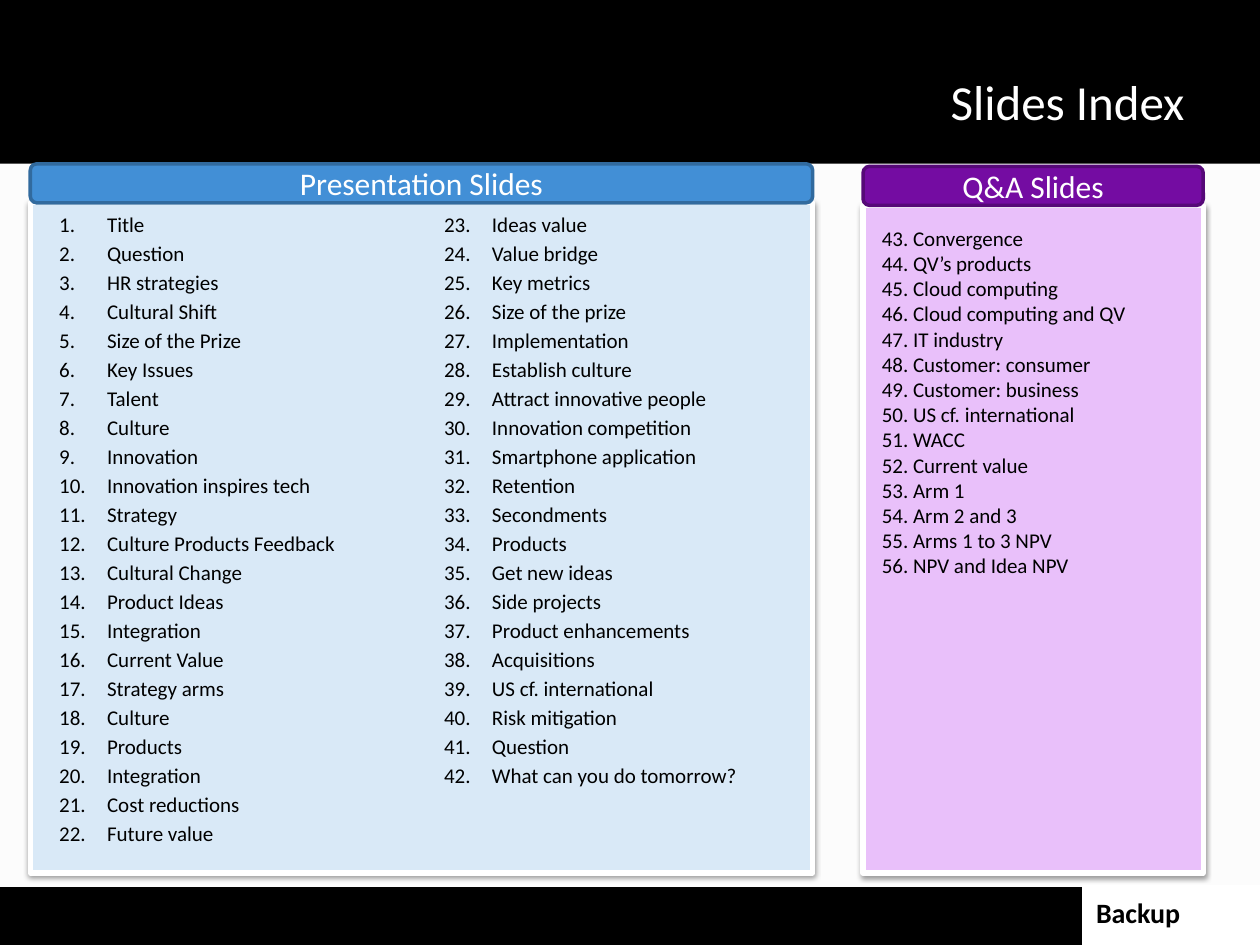
from dataclasses import dataclass

from lxml import etree
from pptx import Presentation
from pptx import util as u
from pptx.dml.color import RGBColor
from pptx.enum import shapes, text
from pptx.oxml import ns

Inches = u.Inches


@dataclass(frozen=True)
class Theme:
    font: str = "Calibri"
    page: str = "FCFCFC"
    black: str = "000000"
    white: str = "FFFFFF"
    blue: tuple = ("428FD6", "316A9E", "D9E9F7")
    purple: tuple = ("740CA2", "560978", "E9C0FA")
    title: float = 28
    heading: float = 18
    label: float = 16
    body: float = 12


THEME = Theme()

PRESENTATION = [
    "Title", "Question", "HR strategies", "Cultural Shift", "Size of the Prize",
    "Key Issues", "Talent", "Culture", "Innovation", "Innovation inspires tech",
    "Strategy", "Culture Products Feedback", "Cultural Change", "Product Ideas",
    "Integration", "Current Value", "Strategy arms", "Culture", "Products",
    "Integration", "Cost reductions", "Future value", "Ideas value",
    "Value bridge", "Key metrics", "Size of the prize", "Implementation",
    "Establish culture", "Attract innovative people", "Innovation competition",
    "Smartphone application", "Retention", "Secondments", "Products",
    "Get new ideas", "Side projects", "Product enhancements", "Acquisitions",
    "US cf. international", "Risk mitigation", "Question",
    "What can you do tomorrow?",
]
QUESTIONS = [
    "Convergence", "QV’s products", "Cloud computing", "Cloud computing and QV",
    "IT industry", "Customer: consumer", "Customer: business",
    "US cf. international", "WACC", "Current value", "Arm 1", "Arm 2 and 3",
    "Arms 1 to 3 NPV", "NPV and Idea NPV",
]


def place(shape, box):
    shape.left, shape.top, shape.width, shape.height = map(Inches, box)


def bring_to_front(shape):
    shape.element.getparent().append(shape.element)


def write(frame, lines, size, color=THEME.black, bold=False, align=None,
          anchor=text.MSO_ANCHOR.TOP, gap=0, numbered=False, wrap=True):
    frame.word_wrap = wrap
    frame.auto_size = text.MSO_AUTO_SIZE.NONE
    frame.vertical_anchor = anchor
    for index, line in enumerate(lines):
        para = frame.paragraphs[0] if index == 0 else frame.add_paragraph()
        if numbered:
            props = para._p.get_or_add_pPr()
            props.set("marL", str(Inches(0.38)))
            props.set("indent", str(-Inches(0.38)))
            etree.SubElement(props, ns.qn("a:buFont"), typeface="+mj-lt")
            etree.SubElement(props, ns.qn("a:buAutoNum"), type="arabicPeriod")
        para.space_before = u.Pt(gap if index else 0)
        para.alignment = align
        span = para.add_run()
        span.text = line
        span.font.name = THEME.font
        span.font.size = u.Pt(size)
        span.font.bold = bold
        span.font.color.rgb = RGBColor.from_string(color)


def add_block(page, box, fill, line=None, weight=0,
              kind=shapes.MSO_SHAPE.RECTANGLE):
    shape = page.shapes.add_shape(kind, *map(Inches, box))
    shape.shadow.inherit = False
    shape.fill.solid()
    shape.fill.fore_color.rgb = RGBColor.from_string(fill)
    if line:
        shape.line.color.rgb = RGBColor.from_string(line)
        shape.line.width = u.Pt(weight)
    else:
        shape.line.fill.background()
    return shape


def add_shadow(shape):
    effects = shape.element.spPr.find(ns.qn("a:effectLst"))
    shadow = etree.SubElement(
        effects, ns.qn("a:outerShdw"), blurRad=str(u.Pt(3.1)),
        dist=str(u.Pt(1.6)), dir="5400000", rotWithShape="0")
    color = etree.SubElement(shadow, ns.qn("a:srgbClr"), val=THEME.black)
    etree.SubElement(color, ns.qn("a:alpha"), val="38000")


def add_header(page, box):
    left, top, width, height = box
    add_block(page, box, THEME.black)
    title = page.shapes.title
    place(title, (left + 0.5, top + 0.3, width - 1, height - 0.3))
    write(title.text_frame, ["Slides Index"], THEME.title, THEME.white,
          align=text.PP_ALIGN.RIGHT, anchor=text.MSO_ANCHOR.MIDDLE)
    bring_to_front(title)


def add_footer(page, box):
    left, top, width, height = box
    add_block(page, box, THEME.black)
    tab = left + 8.6
    add_block(page, (tab, top, width - 8.6, height), THEME.white, THEME.white, 2)
    label = page.shapes.add_textbox(*map(Inches, (tab, top + 0.02, 0.88, 0.37)))
    write(label.text_frame, ["Backup"], THEME.label, bold=True, wrap=False)


def add_panel(page, box, heading, colors):
    left, top, width, height = box
    accent, edge, tint = colors
    bar = 0.31
    add_shadow(add_block(page, (left, top + bar, width, height - bar), tint,
                         THEME.white, 3))
    banner = add_block(page, (left, top, width, bar), accent, edge, 2,
                       shapes.MSO_SHAPE.ROUNDED_RECTANGLE)
    write(banner.text_frame, [heading], THEME.heading, THEME.white,
          align=text.PP_ALIGN.CENTER, anchor=text.MSO_ANCHOR.MIDDLE)


def add_presentation_index(page, box):
    left, top, width, height = box
    add_panel(page, box, "Presentation Slides", THEME.blue)
    body = page.placeholders[1]
    place(body, (left + 0.13, top + 0.33, width + 0.1, 5.18))
    frame = body.text_frame
    write(frame, PRESENTATION, THEME.body, gap=2.15, numbered=True)
    frame.margin_bottom = 0
    frame._txBody.bodyPr.set("numCol", "2")
    bring_to_front(body)


def add_question_index(page, box):
    left, top, width, height = box
    add_panel(page, box, "Q&A Slides", THEME.purple)
    first = len(PRESENTATION) + 1
    entries = [f"{number}. {name}" for number, name in enumerate(QUESTIONS, first)]
    area = (left + 0.05, top + 0.42, width - 0.05, 2.93)
    listing = page.shapes.add_textbox(*map(Inches, area))
    write(listing.text_frame, entries, THEME.body)


def main():
    deck = Presentation()
    deck.slide_width, deck.slide_height = Inches(10), Inches(7.5)
    page = deck.slides.add_slide(deck.slide_layouts[1])
    page.background.fill.solid()
    page.background.fill.fore_color.rgb = RGBColor.from_string(THEME.page)
    add_header(page, (0, 0, 10, 1.3))
    add_footer(page, (0, 7.04, 10, 0.46))
    add_presentation_index(page, (0.24, 1.3, 6.21, 5.63))
    add_question_index(page, (6.85, 1.32, 2.7, 5.61))
    deck.save("out.pptx")


if __name__ == "__main__":
    main()
